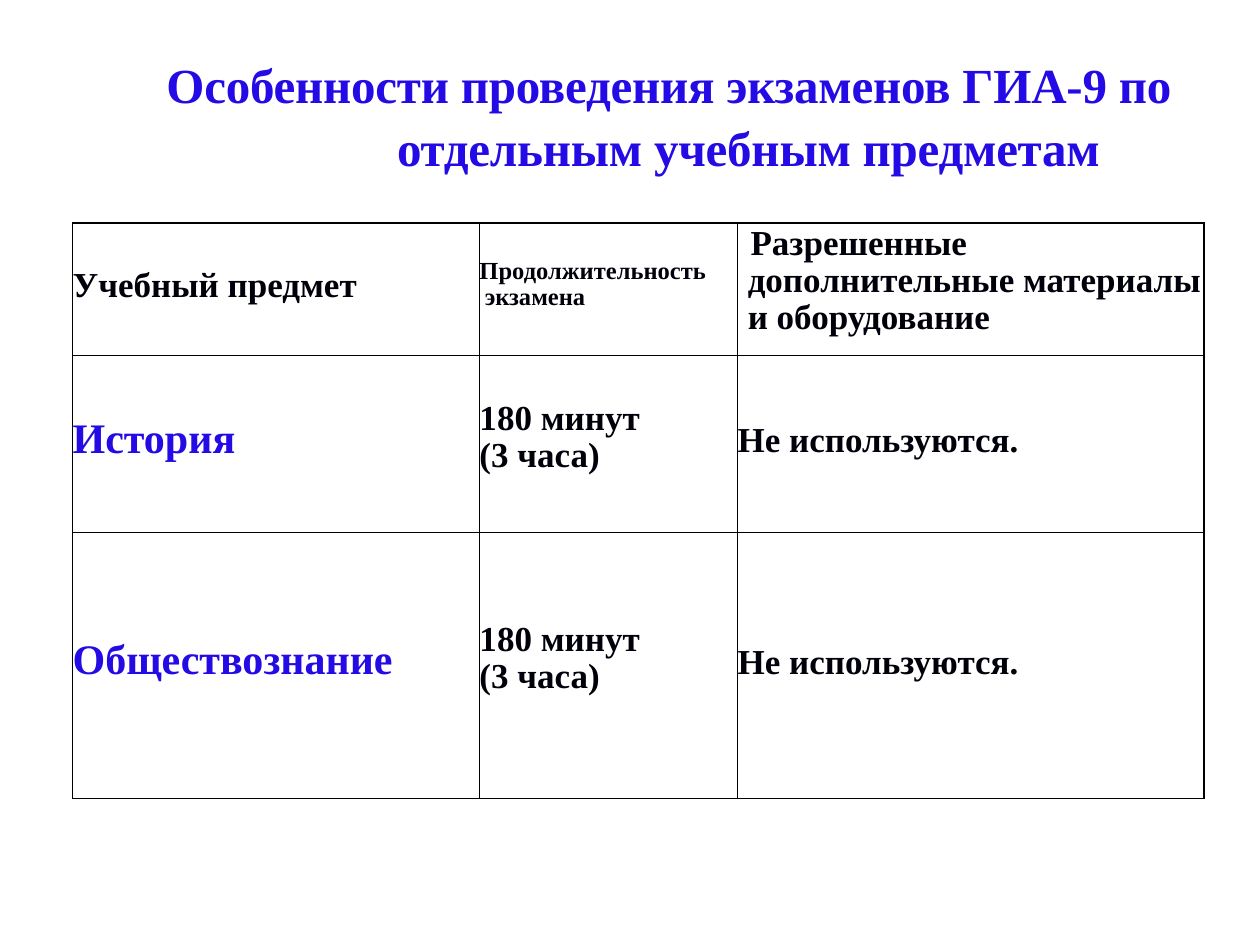
from lxml.etree import SubElement
from pptx import Presentation
from pptx.dml.color import RGBColor
from pptx.enum.text import MSO_ANCHOR, MSO_AUTO_SIZE, PP_ALIGN
from pptx.oxml.ns import qn
from pptx.util import Pt

COLORS = {"accent": "240AE4", "text": "00000A", "border": "000000"}
FONT = "Times New Roman"

TITLE = "Особенности проведения экзаменов ГИА-9 по отдельным учебным предметам"
HEADERS = ["Учебный предмет", "Продолжительность экзамена",
           "Разрешенные дополнительные материалы и оборудование"]
EXAMS = [
    ("История", ["180 минут", "(3 часа)"], "Не используются."),
    ("Обществознание", ["180 минут", "(3 часа)"], "Не используются."),
]

COLUMN_WIDTHS = [232.5, 147.5, 266.5]
ROW_HEIGHTS = [75.8, 101.2, 152]
TOP_MARGINS = [(25.4, 20.7, 1.4), (35.4, 25.7, 38.2), (60.6, 50.8, 64)]
HEADER_SIZES = [20, 14, 20]
HEADER_INDENTS = [(0, 0), (3, -3), (5.8, 1.6)]
EXAM_SIZES = [24, 20, 20]


def write(paragraph, text, size, color, spacing, indent=(0, 0), tracking=0):
    paragraph.alignment = PP_ALIGN.LEFT
    paragraph.line_spacing = spacing
    paragraph.space_before = paragraph.space_after = Pt(0)
    properties = paragraph._p.get_or_add_pPr()
    properties.set("marL", str(Pt(indent[0])))
    properties.set("indent", str(Pt(indent[1])))
    run = paragraph.add_run()
    run.text = text
    run.font.name = FONT
    run.font.size = Pt(size)
    run.font.bold = True
    run.font.color.rgb = RGBColor.from_string(COLORS[color])
    if tracking:
        run._r.get_or_add_rPr().set("spc", str(tracking))


def add_borders(cell):
    properties = cell._tc.get_or_add_tcPr()
    for side in ("a:lnL", "a:lnR", "a:lnT", "a:lnB"):
        line = SubElement(properties, qn(side), w=str(Pt(1)))
        fill = SubElement(line, qn("a:solidFill"))
        SubElement(fill, qn("a:srgbClr"), val=COLORS["border"])


def fill_cell(cell, lines, top, size, color, indent=(0, 0)):
    cell.margin_left = cell.margin_right = cell.margin_bottom = Pt(0)
    cell.margin_top = Pt(top)
    cell.vertical_anchor = MSO_ANCHOR.TOP
    add_borders(cell)
    cell.fill.background()
    frame = cell.text_frame
    for index, line in enumerate(lines):
        paragraph = frame.add_paragraph() if index else frame.paragraphs[0]
        write(paragraph, line, size, color, 0.96, indent)


def add_title(slide):
    title = slide.shapes.title
    title.left, title.top, title.width, title.height = Pt(37.5), Pt(28), Pt(644.5), Pt(69)
    frame = title.text_frame
    frame.margin_left = frame.margin_right = frame.margin_bottom = Pt(0)
    frame.margin_top = Pt(1)
    frame.word_wrap = True
    frame.auto_size = MSO_AUTO_SIZE.NONE
    frame.vertical_anchor = MSO_ANCHOR.TOP
    write(frame.paragraphs[0], TITLE, 28, "accent", 1.07, (189.4, -131.8), -10)


def add_exam_table(slide):
    exam_table = slide.shapes.add_table(
        len(ROW_HEIGHTS), len(COLUMN_WIDTHS), Pt(41.5), Pt(127.3),
        Pt(sum(COLUMN_WIDTHS)), Pt(sum(ROW_HEIGHTS))).table
    exam_table.first_row = exam_table.horz_banding = False
    for column, width in zip(exam_table.columns, COLUMN_WIDTHS):
        column.width = Pt(width)
    for row, height in zip(exam_table.rows, ROW_HEIGHTS):
        row.height = Pt(height)
    for c, header in enumerate(HEADERS):
        fill_cell(exam_table.cell(0, c), [header], TOP_MARGINS[0][c],
                  HEADER_SIZES[c], "text", HEADER_INDENTS[c])
    for r, (subject, duration, materials) in enumerate(EXAMS, 1):
        for c, lines in enumerate(([subject], duration, [materials])):
            fill_cell(exam_table.cell(r, c), lines, TOP_MARGINS[r][c],
                      EXAM_SIZES[c], "text" if c else "accent")


def main():
    deck = Presentation()
    deck.slide_width, deck.slide_height = Pt(720), Pt(540)
    slide = deck.slides.add_slide(deck.slide_layouts[5])
    add_title(slide)
    add_exam_table(slide)
    deck.save("out.pptx")


if __name__ == "__main__":
    main()
